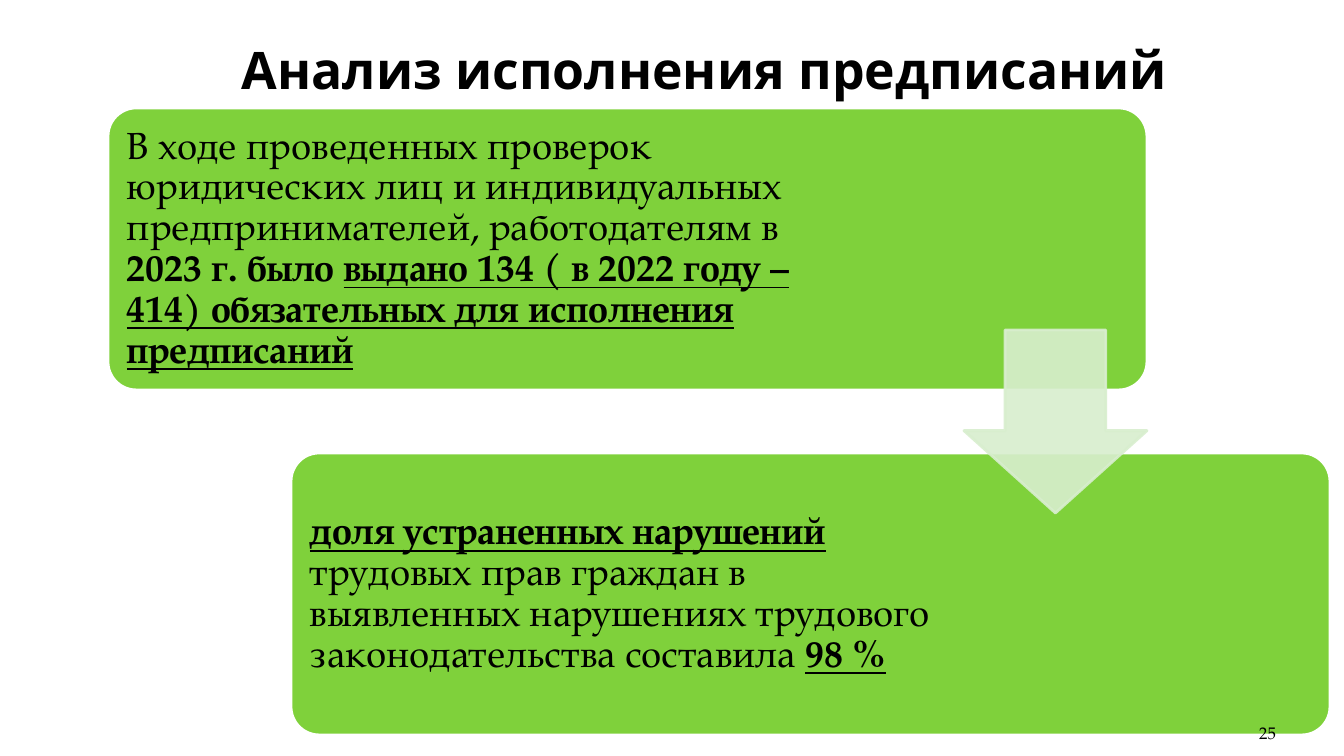
"""Build the slide on how labour inspection orders were carried out."""
from dataclasses import dataclass

from lxml.etree import SubElement
from pptx import Presentation
from pptx.dml.color import RGBColor
from pptx.enum.shapes import MSO_SHAPE
from pptx.enum.text import MSO_ANCHOR, PP_ALIGN
from pptx.oxml.ns import qn
from pptx.util import Emu, Pt


@dataclass(frozen=True)
class Theme:
    ink: RGBColor = RGBColor(0x00, 0x00, 0x00)
    panel: RGBColor = RGBColor(0x7F, 0xD1, 0x3B)
    outline: RGBColor = RGBColor(0xFF, 0xFF, 0xFF)
    arrow: RGBColor = RGBColor(0xD8, 0xEE, 0xCE)
    title_font: str = "Open Sans"
    body_font: str = "TeX Gyre Pagella"
    title_size: float = 36.9
    body_size: float = 27
    number_size: float = 12
    line_width: float = 2
    arrow_opacity: int = 90


THEME = Theme()
PAGE_WIDTH, PAGE_HEIGHT = 1344, 756
PANEL_WIDTH, PANEL_HEIGHT = 1039, 282
PANEL_PADDING = 8
TEXT_INSET = 11

PLAIN = (False, False)
BOLD = (True, False)
STRESSED = (True, True)

ISSUED_ORDERS = [
    ("В ходе проведенных проверок юридических лиц и индивидуальных "
     "предпринимателей, работодателям в ", PLAIN),
    ("2023 г. было ", BOLD),
    ("выдано 134 ( в 2022 году – 414) обязательных для исполнения "
     "предписаний", STRESSED),
]
RESOLVED_SHARE = [
    ("доля устраненных нарушений ", STRESSED),
    ("трудовых прав граждан в выявленных нарушениях трудового "
     "законодательства составила ", PLAIN),
    ("98 %", STRESSED),
]


def px(length):
    """Turn pixels into EMU."""
    return Emu(round(length * 914400 / 100.8))


def add_text(page, area, spans, font, size, align=PP_ALIGN.LEFT,
             anchor=MSO_ANCHOR.MIDDLE, insets=(10, 5), line_spacing=1.0):
    """Add a one-paragraph text box made of styled spans."""
    box = page.shapes.add_textbox(*map(px, area))
    frame = box.text_frame
    frame.word_wrap = True
    frame.vertical_anchor = anchor
    frame.margin_left = frame.margin_right = px(insets[0])
    frame.margin_top = frame.margin_bottom = px(insets[1])
    para = frame.paragraphs[0]
    para.alignment = align
    para.line_spacing = line_spacing
    para.font.name = font
    para.font.size = Pt(size)
    para.font.color.rgb = THEME.ink
    for text, (bold, underline) in spans:
        span = para.add_run()
        span.text = text
        span.font.bold = bold
        span.font.underline = underline


def add_figure(page, kind, area, adjustments, fill, line):
    """Add a flat preset shape with a solid fill and outline."""
    figure = page.shapes.add_shape(kind, *map(px, area))
    figure.shadow.inherit = False
    for index, value in enumerate(adjustments):
        figure.adjustments[index] = value
    figure.fill.solid()
    figure.fill.fore_color.rgb = fill
    figure.line.color.rgb = line
    figure.line.width = Pt(THEME.line_width)
    return figure


def set_opacity(figure, percent):
    """Make the fill and outline of a figure partly transparent."""
    for color in figure._element.spPr.iter(qn("a:srgbClr")):
        SubElement(color, qn("a:alpha"), val=str(percent * 1000))


def add_panel(page, left, top, text_width, spans):
    """Add a rounded panel with its text in the left part."""
    add_figure(page, MSO_SHAPE.ROUNDED_RECTANGLE,
               (left, top, PANEL_WIDTH, PANEL_HEIGHT), [0.1],
               THEME.panel, THEME.outline)
    text_area = (left + PANEL_PADDING, top + PANEL_PADDING,
                 text_width, PANEL_HEIGHT - 2 * PANEL_PADDING)
    add_text(page, text_area, spans, THEME.body_font, THEME.body_size,
             insets=(TEXT_INSET, TEXT_INSET), line_spacing=0.9)


def add_down_arrow(page, area):
    """Add the translucent arrow that leads to the next panel."""
    arrow = add_figure(page, MSO_SHAPE.DOWN_ARROW, area, [0.55, 0.45],
                       THEME.arrow, THEME.arrow)
    set_opacity(arrow, THEME.arrow_opacity)


def main():
    """Build the slide and save it."""
    deck = Presentation()
    deck.slide_width, deck.slide_height = px(PAGE_WIDTH), px(PAGE_HEIGHT)
    page = deck.slides.add_slide(deck.slide_layouts[6])
    add_text(page, (134, 30, 1142, 78),
             [("Анализ исполнения предписаний", BOLD)],
             THEME.title_font, THEME.title_size, PP_ALIGN.CENTER)
    add_panel(page, 108, 108, 748, ISSUED_ORDERS)
    add_panel(page, 291, 453, 656, RESOLVED_SHARE)
    add_down_arrow(page, (964, 330, 183, 183))
    add_text(page, (1164, 708, 112, 40), [("25", PLAIN)],
             THEME.body_font, THEME.number_size, PP_ALIGN.RIGHT,
             MSO_ANCHOR.BOTTOM, insets=(0, 5))
    deck.save("out.pptx")


if __name__ == "__main__":
    main()
